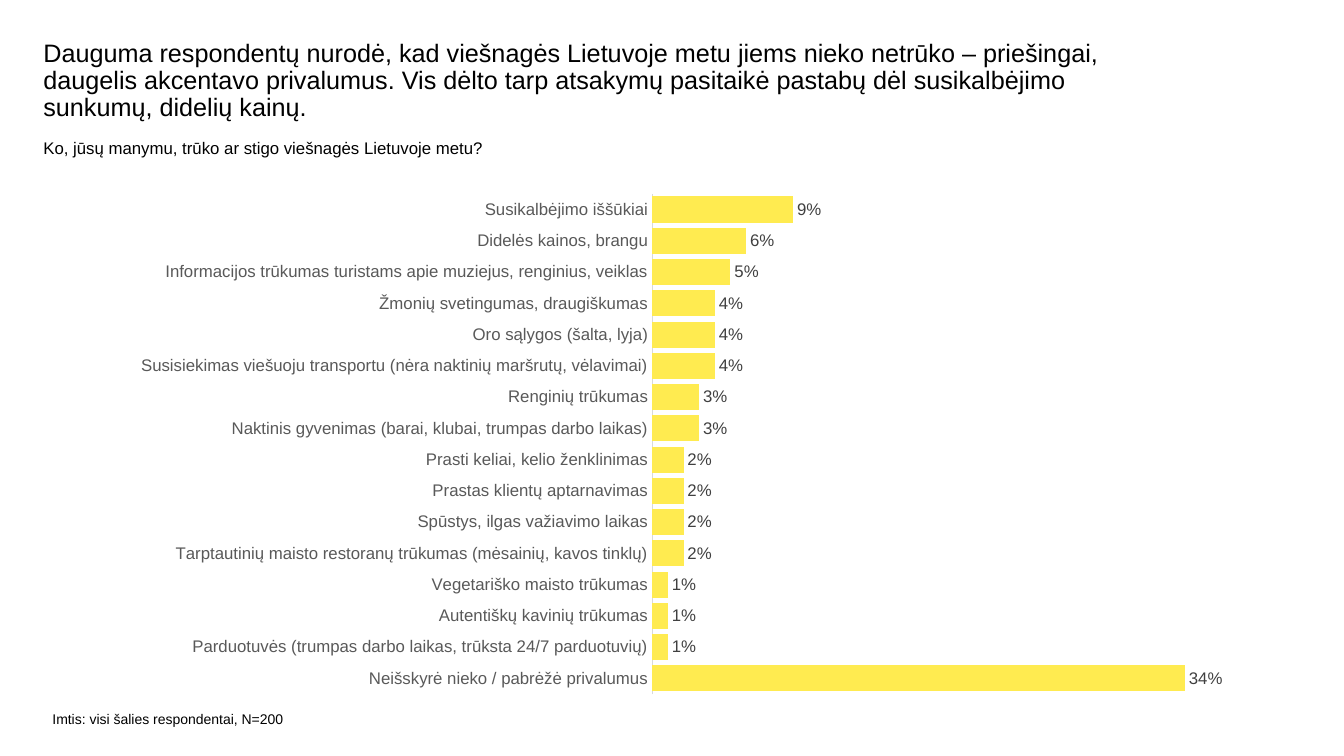
from lxml import etree
from pptx import Presentation
from pptx.chart.data import CategoryChartData
from pptx.dml.color import RGBColor
from pptx.enum.chart import XL_CHART_TYPE, XL_LABEL_POSITION, XL_TICK_MARK
from pptx.enum.text import MSO_ANCHOR
from pptx.oxml.ns import qn
from pptx.util import Inches, Pt

FONT = "Arial"
COLORS = {
    "text": "000000",
    "category": "595959",
    "value": "404040",
    "axis": "D9D9D9",
    "bar": "FFEB50",
}
# Listed from the top bar to the bottom bar, in percent.
ANSWERS = [
    ("Susikalbėjimo iššūkiai", 9),
    ("Didelės kainos, brangu", 6),
    ("Informacijos trūkumas turistams apie muziejus, renginius, veiklas", 5),
    ("Žmonių svetingumas, draugiškumas", 4),
    ("Oro sąlygos (šalta, lyja)", 4),
    ("Susisiekimas viešuoju transportu (nėra naktinių maršrutų, vėlavimai)", 4),
    ("Renginių trūkumas", 3),
    ("Naktinis gyvenimas (barai, klubai, trumpas darbo laikas)", 3),
    ("Prasti keliai, kelio ženklinimas", 2),
    ("Prastas klientų aptarnavimas", 2),
    ("Spūstys, ilgas važiavimo laikas", 2),
    ("Tarptautinių maisto restoranų trūkumas (mėsainių, kavos tinklų)", 2),
    ("Vegetariško maisto trūkumas", 1),
    ("Autentiškų kavinių trūkumas", 1),
    ("Parduotuvės (trumpas darbo laikas, trūksta 24/7 parduotuvių)", 1),
    ("Neišskyrė nieko / pabrėžė privalumus", 34),
]


def style_font(font, size, color):
    font.name = FONT
    font.size = Pt(size)
    font.color.rgb = RGBColor.from_string(COLORS[color])


def add_text(slide, text, left, top, width, height, size=12, color="text", line_spacing=None):
    box = slide.shapes.add_textbox(Inches(left), Inches(top), Inches(width), Inches(height))
    frame = box.text_frame
    frame.word_wrap = True
    frame.vertical_anchor = MSO_ANCHOR.TOP
    frame.margin_left = frame.margin_top = frame.margin_right = frame.margin_bottom = 0
    paragraph = frame.paragraphs[0]
    paragraph.line_spacing = line_spacing
    run = paragraph.add_run()
    run.text = text
    style_font(run.font, size, color)


def set_plot_area(chart, **fractions):
    """Fix the inner plot area with x, y, w and h as fractions of the chart."""
    plot_area = chart.plots[0]._element.getparent()
    for old_layout in plot_area.findall(qn("c:layout")):
        plot_area.remove(old_layout)
    layout = etree.Element(qn("c:layout"))
    plot_area.insert(0, layout)
    manual = etree.SubElement(layout, qn("c:manualLayout"))
    settings = {"layoutTarget": "inner", "xMode": "edge", "yMode": "edge", **fractions}
    for name, value in settings.items():
        etree.SubElement(manual, qn(f"c:{name}")).set("val", str(value))


def add_answer_chart(slide, left, top, width, height):
    data = CategoryChartData(number_format="0%")
    bottom_up = ANSWERS[::-1]
    data.categories = [answer for answer, _ in bottom_up]
    data.add_series("Series 1", [percent / 100 for _, percent in bottom_up])
    chart = slide.shapes.add_chart(
        XL_CHART_TYPE.BAR_CLUSTERED,
        Inches(left), Inches(top), Inches(width), Inches(height), data,
    ).chart
    chart.has_legend = False
    chart.has_title = False
    style_font(chart.font, 10, "text")

    category_axis = chart.category_axis
    category_axis.major_tick_mark = XL_TICK_MARK.NONE
    category_axis.minor_tick_mark = XL_TICK_MARK.NONE
    category_axis.format.line.color.rgb = RGBColor.from_string(COLORS["axis"])
    category_axis.format.line.width = Pt(0.75)
    style_font(category_axis.tick_labels.font, 12, "category")

    value_axis = chart.value_axis
    value_axis.minimum_scale = 0
    value_axis.maximum_scale = 0.4
    value_axis.has_major_gridlines = False
    value_axis.visible = False

    plot = chart.plots[0]
    plot.gap_width = 20
    plot.vary_by_categories = False
    fill = plot.series[0].format.fill
    fill.solid()
    fill.fore_color.rgb = RGBColor.from_string(COLORS["bar"])
    plot.has_data_labels = True
    labels = plot.data_labels
    labels.show_value = True
    labels.number_format = "0%"
    labels.number_format_is_linked = False
    labels.position = XL_LABEL_POSITION.OUTSIDE_END
    style_font(labels.font, 12, "value")
    set_plot_area(chart, x=0.45, y=0.02, w=0.53, h=0.96)


def main():
    presentation = Presentation()
    presentation.slide_width = Inches(13.33)
    presentation.slide_height = Inches(7.5)
    slide = presentation.slides.add_slide(presentation.slide_layouts[6])
    add_text(
        slide,
        "Dauguma respondentų nurodė, kad viešnagės Lietuvoje metu jiems nieko netrūko – "
        "priešingai, daugelis akcentavo privalumus. Vis dėlto tarp atsakymų pasitaikė "
        "pastabų dėl susikalbėjimo sunkumų, didelių kainų.",
        0.43, 0.4, 11.25, 0.6, size=18, line_spacing=0.9,
    )
    add_text(
        slide, "Ko, jūsų manymu, trūko ar stigo viešnagės Lietuvoje metu?",
        0.43, 1.37, 11.91, 0.25,
    )
    add_text(slide, "Imtis: visi šalies respondentai, N=200", 0.52, 7.05, 3.86, 0.28, size=10)
    add_answer_chart(slide, 1.19, 1.82, 11.73, 5.17)
    presentation.save("out.pptx")


if __name__ == "__main__":
    main()
